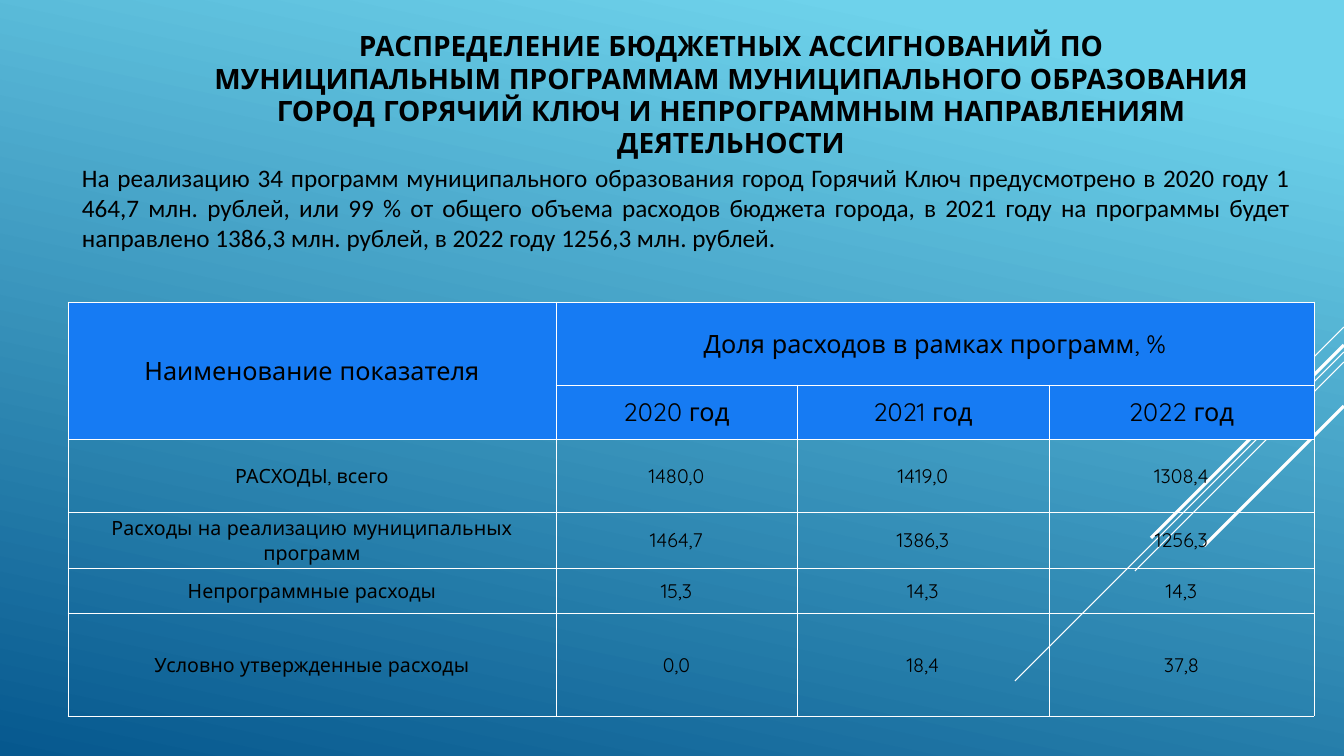
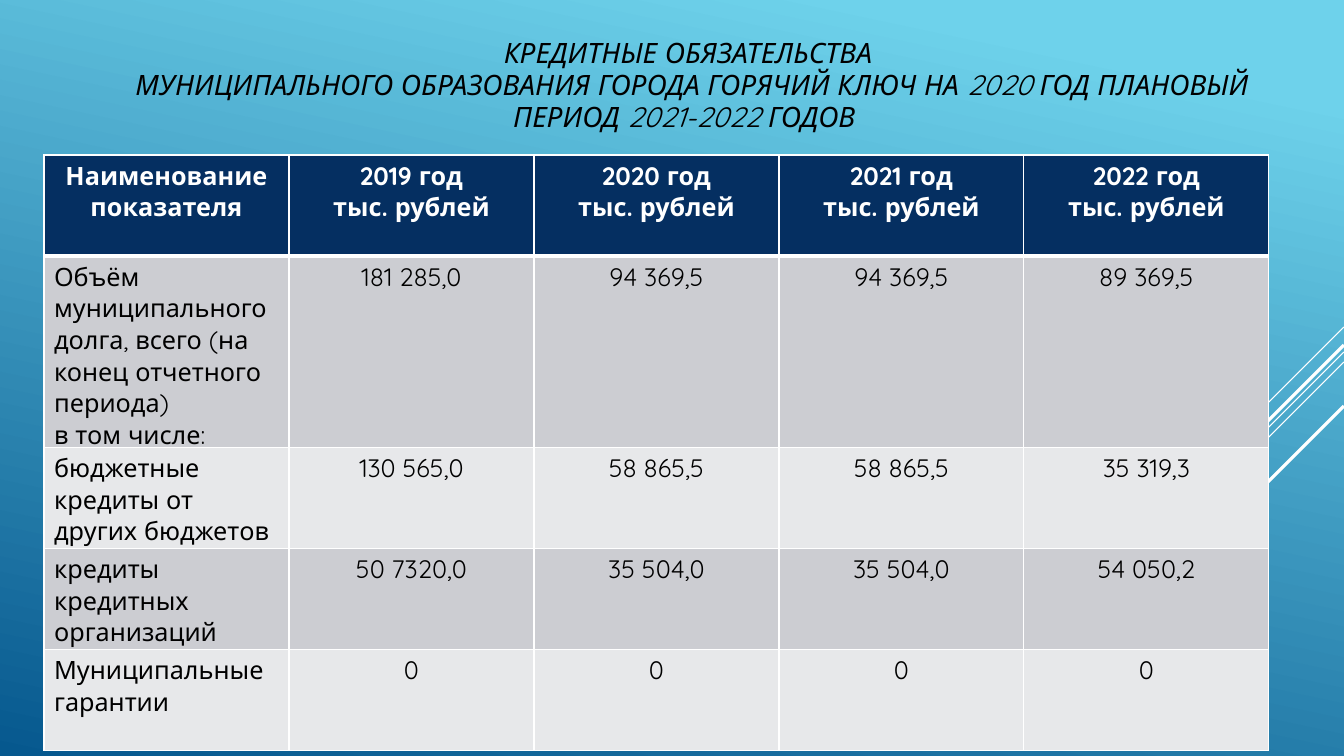
from lxml import etree
from pptx import Presentation
from pptx import util as u
from pptx.dml.color import RGBColor
from pptx.enum import shapes, text
from pptx.oxml import ns

PX = 914400 / 100.8  # EMU in one px
WIDTH, HEIGHT = 1344, 756
COLORS = {
    "sky": "6ED2EB", "deep": "06588E", "white": "FFFFFF", "black": "000000",
    "blue": "167BF3", "navy": "052F61", "gray": "CCCDD2", "pale": "E7E8EA",
}
CENTER, LEFT = text.PP_ALIGN.CENTER, text.PP_ALIGN.LEFT
JUSTIFY, MIDDLE = text.PP_ALIGN.JUSTIFY, text.MSO_ANCHOR.MIDDLE

# Diagonal rays from the right edge: start y, horizontal run, weight in points
RAYS = [(327, 101, 0.75), (352, 329, 0.75), (362, 209, 0.75),
        (345, 193, 2.25), (406, 140, 2.25)]

# Shared text formats
BASE = {"name": "Quicksand", "size": u.Pt(18), "bold": False, "color": "black"}
TITLE = BASE | {"size": u.Pt(20)}
SMALL = BASE | {"size": u.Pt(14)}
HEADER = BASE | {"bold": True, "color": "white"}

# Slide content
PROGRAMS = {
    "title": "РАСПРЕДЕЛЕНИЕ БЮДЖЕТНЫХ АССИГНОВАНИЙ ПО МУНИЦИПАЛЬНЫМ ПРОГРАММАМ "
             "МУНИЦИПАЛЬНОГО ОБРАЗОВАНИЯ ГОРОД ГОРЯЧИЙ КЛЮЧ И НЕПРОГРАММНЫМ "
             "НАПРАВЛЕНИЯМ ДЕЯТЕЛЬНОСТИ",
    "intro": "На реализацию 34 программ муниципального образования город Горячий Ключ "
             "предусмотрено в 2020 году 1 464,7 млн. рублей, или 99 % от общего объема "
             "расходов бюджета города, в 2021 году на программы будет направлено "
             "1386,3 млн. рублей, в 2022 году 1256,3 млн. рублей.",
    "columns": [488, 241, 252, 265],
    "heights": [83, 54, 73, 56, 45, 103],
    "rows": [
        ["Наименование показателя", "Доля расходов в рамках программ, %", "", ""],
        ["", "2020 год", "2021 год", "2022 год"],
        ["РАСХОДЫ, всего", "1480,0", "1419,0", "1308,4"],
        ["Расходы на реализацию муниципальных программ", "1464,7", "1386,3", "1256,3"],
        ["Непрограммные расходы", "15,3", "14,3", "14,3"],
        ["Условно утвержденные расходы", "0,0", "18,4", "37,8"],
    ],
}
CREDITS = {
    "title": "КРЕДИТНЫЕ ОБЯЗАТЕЛЬСТВА\v МУНИЦИПАЛЬНОГО ОБРАЗОВАНИЯ ГОРОДА ГОРЯЧИЙ КЛЮЧ "
             "НА 2020 ГОД ПЛАНОВЫЙ ПЕРИОД 2021-2022 ГОДОВ ",
    "columns": [245] * 5,
    "heights": [101] * 5,
    "rows": [
        ["Наименование показателя"]
        + [f"{year} год\nтыс. рублей" for year in range(2019, 2023)],
        ["Объём муниципального долга, всего (на конец отчетного периода)\nв том числе:",
         "181 285,0", "94 369,5", "94 369,5", "89 369,5"],
        ["бюджетные кредиты от других бюджетов",
         "130 565,0", "58 865,5", "58 865,5", "35 319,3"],
        ["кредиты кредитных организаций",
         "50 7320,0", "35 504,0", "35 504,0", "54 050,2"],
        ["Муниципальные гарантии", "0", "0", "0", "0"],
    ],
}


def px(value):
    return u.Emu(round(value * PX))


def rgb(name):
    return RGBColor.from_string(COLORS[name])


def write(frame, content, style, align, spacing=None):
    """Put one paragraph per line into a text frame."""
    for index, line in enumerate(content.split("\n")):
        para = frame.paragraphs[0] if index == 0 else frame.add_paragraph()
        para.text = line
        para.alignment = align
        para.line_spacing = spacing
        for span in para.runs:
            for key, value in style.items():
                if key == "color":
                    span.font.color.rgb = rgb(value)
                else:
                    setattr(span.font, key, value)


def add_text(page, area, content, style, align, anchor=None, spacing=None):
    box = page.shapes.add_textbox(*map(px, area))
    box.text_frame.word_wrap = True
    box.text_frame.vertical_anchor = anchor
    write(box.text_frame, content, style, align, spacing)


def add_page(deck, title, area, **emphasis):
    """Blank page with the gradient, the rays and a title."""
    page = deck.slides.add_slide(deck.slide_layouts[6])
    fill = page.background.fill
    fill.gradient()
    fill.gradient_angle = 258
    for stop, position, name in zip(fill.gradient_stops, (0.1, 1), ("sky", "deep")):
        stop.position = position
        stop.color.rgb = rgb(name)
    for top, run, weight in RAYS:
        ray = page.shapes.add_connector(
            shapes.MSO_CONNECTOR.STRAIGHT,
            *map(px, (WIDTH, top, WIDTH - run, top + run)))
        ray.line.color.rgb = rgb("white")
        ray.line.width = u.Pt(weight)
        etree.SubElement(ray._element.spPr, ns.qn("a:effectLst"))
    add_text(page, area, title, TITLE | emphasis, CENTER, MIDDLE, 0.96)
    return page


def set_borders(cell, **weights):
    """Draw white cell borders; sides come in schema order L, R, T, B."""
    props = cell._tc.get_or_add_tcPr()
    for index, (side, weight) in enumerate(weights.items()):
        edge = etree.Element(ns.qn(f"a:ln{side}"), w=str(u.Pt(weight)))
        paint = etree.SubElement(edge, ns.qn("a:solidFill"))
        etree.SubElement(paint, ns.qn("a:srgbClr"), val=COLORS["white"])
        props.insert(index, edge)


def add_grid(page, left, top, data, look):
    """Add a table; look(row, column) gives style, fill, alignment, top and bottom."""
    columns, heights, rows = data["columns"], data["heights"], data["rows"]
    area = (left, top, sum(columns), sum(heights))
    table = page.shapes.add_table(len(rows), len(columns), *map(px, area)).table
    table.first_row = table.horz_banding = False
    for column, width in zip(table.columns, columns):
        column.width = px(width)
    for row, height in zip(table.rows, heights):
        row.height = px(height)
    for r, values in enumerate(rows):
        for c, value in enumerate(values):
            cell = table.cell(r, c)
            style, fill, align, weights = look(r, c)
            write(cell.text_frame, value, style, align)
            if fill:
                cell.fill.solid()
                cell.fill.fore_color.rgb = rgb(fill)
            else:
                cell.fill.background()
            set_borders(cell, **weights)
    return table


def program_look(r, c):
    head = r < 2
    return (BASE if head else SMALL, "blue" if head else None, CENTER,
            dict.fromkeys("LRTB", 0.5))


def credit_look(r, c):
    head = r == 0
    fill = "navy" if head else ("pale", "gray")[r % 2]
    align = CENTER if head or c else LEFT
    weights = {"L": 1, "R": 1, "T": 3 if r == 1 else 1, "B": 3 if head else 1}
    return HEADER if head else BASE, fill, align, weights


def build_programs(deck):
    page = add_page(deck, PROGRAMS["title"], (202, 39, 1058, 113), bold=True)
    add_text(page, (72, 157, 1228, 102), PROGRAMS["intro"],
             BASE | {"name": "Calibri"}, JUSTIFY)
    table = add_grid(page, 68, 302, PROGRAMS, program_look)
    for cell in table.iter_cells():
        cell.vertical_anchor = MIDDLE
        cell.margin_left = cell.margin_right = cell.margin_top = px(1)
        cell.margin_bottom = 0
    table.cell(0, 0).merge(table.cell(1, 0))
    table.cell(0, 1).merge(table.cell(0, 3))


def build_credits(deck):
    page = add_page(deck, CREDITS["title"], (76, 17, 1224, 138), italic=True)
    add_grid(page, 44, 155, CREDITS, credit_look)


def main():
    deck = Presentation()
    deck.slide_width, deck.slide_height = px(WIDTH), px(HEIGHT)
    build_programs(deck)
    build_credits(deck)
    deck.save("out.pptx")


if __name__ == "__main__":
    main()
